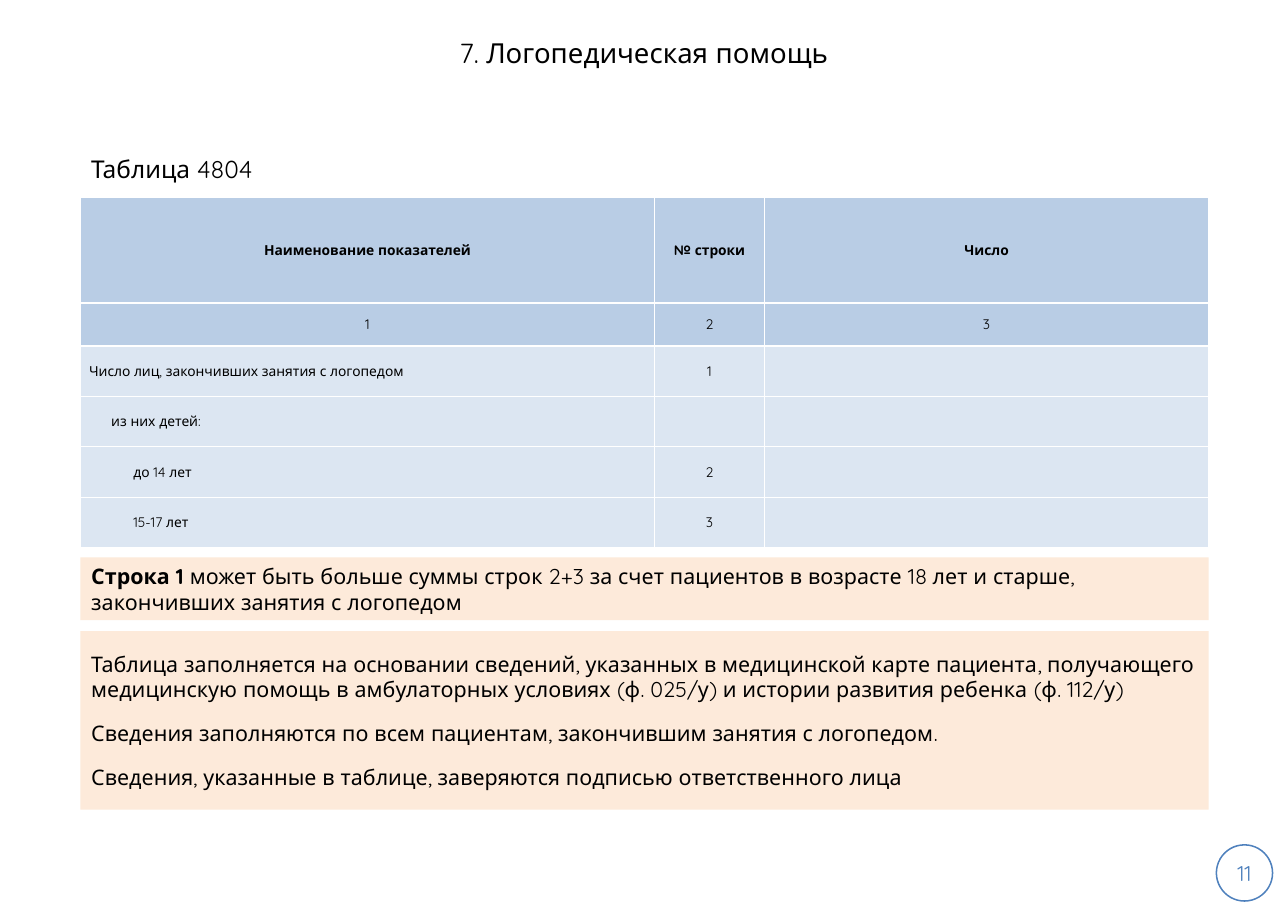
from pptx import Presentation
from pptx.dml.color import RGBColor as RGB
from pptx.enum.shapes import MSO_SHAPE as Kind
from pptx.enum.text import MSO_ANCHOR as Anchor, MSO_AUTO_SIZE as Fit, PP_ALIGN as Align
from pptx.util import Inches, Pt

WIDE, HIGH = Inches(11.69), Inches(8.27)
FONT = "Quicksand"
HUE = {"text": "000000", "head": "B9CDE5", "body": "DCE6F2", "note": "FDEADA", "page": "4F81BD"}

# Lengths are percent of the slide's width or height.
LEFT, SPAN = 6.24, 87.6
COLS = [44.57, 8.55, 34.48]
ROWS = [11.61, 4.72] + [5.54] * 4
STEP = Inches(0.2)

# Indent level, then the cells of the row.
LINES = [
    (0, "Наименование показателей", "№ строки", "Число"),
    (0, "1", "2", "3"),
    (0, "Число лиц, закончивших занятия с логопедом", "1", ""),
    (1, "из них детей:", "", ""),
    (2, "до 14 лет", "2", ""),
    (2, "15-17 лет", "3", ""),
]
RULE = ("может быть больше суммы строк 2+3 за счет пациентов в возрасте 18 лет и старше, "
        "закончивших занятия с логопедом")
NOTES = [
    "Таблица заполняется на основании сведений, указанных в медицинской карте пациента, "
    "получающего медицинскую помощь в амбулаторных условиях (ф. 025/у) и истории развития "
    "ребенка (ф. 112/у)",
    "Сведения заполняются по всем пациентам, закончившим занятия с логопедом.",
    "Сведения, указанные в таблице, заверяются подписью ответственного лица",
]


def across(share):
    return round(WIDE * share / 100)


def down(share):
    return round(HIGH * share / 100)


def area(left, top, width, height):
    return across(left), down(top), across(width), down(height)


def paint(item, hue):
    item.fill.solid()
    item.fill.fore_color.rgb = RGB.from_string(HUE[hue])


def put(frame, *texts, lead="", size=14, hue="text", bold=False, align=Align.LEFT, after=0, level=0):
    """Write one paragraph per text; lead is a bold opening of each."""
    for num, text in enumerate(texts):
        para = frame.add_paragraph() if num else frame.paragraphs[0]
        para.alignment = align
        para.space_after = Pt(after)
        if level:
            para._p.get_or_add_pPr().set("marL", str(level * STEP))
        for part, heavy in ((lead, True), (text, bold)):
            if part:
                run = para.add_run()
                run.text = part
                font = run.font
                font.name, font.size, font.bold = FONT, Pt(size), heavy
                font.color.rgb = RGB.from_string(HUE[hue])


def set_frame(shape):
    frame = shape.text_frame
    frame.word_wrap = True
    frame.auto_size = Fit.NONE
    frame.vertical_anchor = Anchor.MIDDLE
    return frame


def add_title(slide, text):
    title = slide.shapes.title
    title.left, title.top, title.width, title.height = area(0, 0, 100, 11.49)
    put(set_frame(title), text, size=18, align=Align.CENTER)


def add_label(slide, text, top, height):
    box = slide.shapes.add_textbox(*area(LEFT, top, SPAN, height))
    put(set_frame(box), text, size=16)


def add_note(slide, top, height, *texts, **form):
    box = slide.shapes.add_shape(Kind.RECTANGLE, *area(LEFT, top, SPAN, height))
    box.shadow.inherit = False
    paint(box, "note")
    box.line.fill.background()
    put(set_frame(box), *texts, after=12, **form)


def add_grid(slide, top):
    place = area(LEFT, top, SPAN, sum(ROWS))
    table = slide.shapes.add_table(len(ROWS), len(COLS), *place).table
    table.first_row = table.horz_banding = False
    for col, share in zip(table.columns, COLS):
        col.width = across(share)
    for row, share in zip(table.rows, ROWS):
        row.height = down(share)
    for r, (level, *texts) in enumerate(LINES):
        for c, text in enumerate(texts):
            cell = table.cell(r, c)
            paint(cell, "head" if r < 2 else "body")
            cell.vertical_anchor = Anchor.MIDDLE
            cell.margin_left = cell.margin_right = Inches(0.08)
            cell.margin_top = cell.margin_bottom = Inches(0.04)
            name = c == 0 and r > 1
            put(cell.text_frame, text, size=9, bold=r == 0,
                align=Align.LEFT if name else Align.CENTER, level=level if name else 0)


def add_page(slide, text):
    left, top, side, _ = area(94.44, 92.74, 4.36, 0)
    disc = slide.shapes.add_shape(Kind.OVAL, left, top, side, side)
    disc.shadow.inherit = False
    disc.fill.background()
    disc.line.color.rgb = RGB.from_string(HUE["page"])
    disc.line.width = Pt(1)
    frame = set_frame(disc)
    frame.margin_left = frame.margin_right = frame.margin_top = frame.margin_bottom = 0
    put(frame, text, hue="page", align=Align.CENTER)


def main():
    deck = Presentation()
    deck.slide_width, deck.slide_height = WIDE, HIGH
    slide = deck.slides.add_slide(deck.slide_layouts[5])
    add_title(slide, "7. Логопедическая помощь")
    add_label(slide, "Таблица 4804", 15.72, 5.56)
    add_grid(slide, 21.64)
    add_note(slide, 61.19, 6.89, RULE, lead="Строка 1 ")
    add_note(slide, 69.29, 19.59, *NOTES)
    add_page(slide, "11")
    deck.save("out.pptx")


if __name__ == "__main__":
    main()
